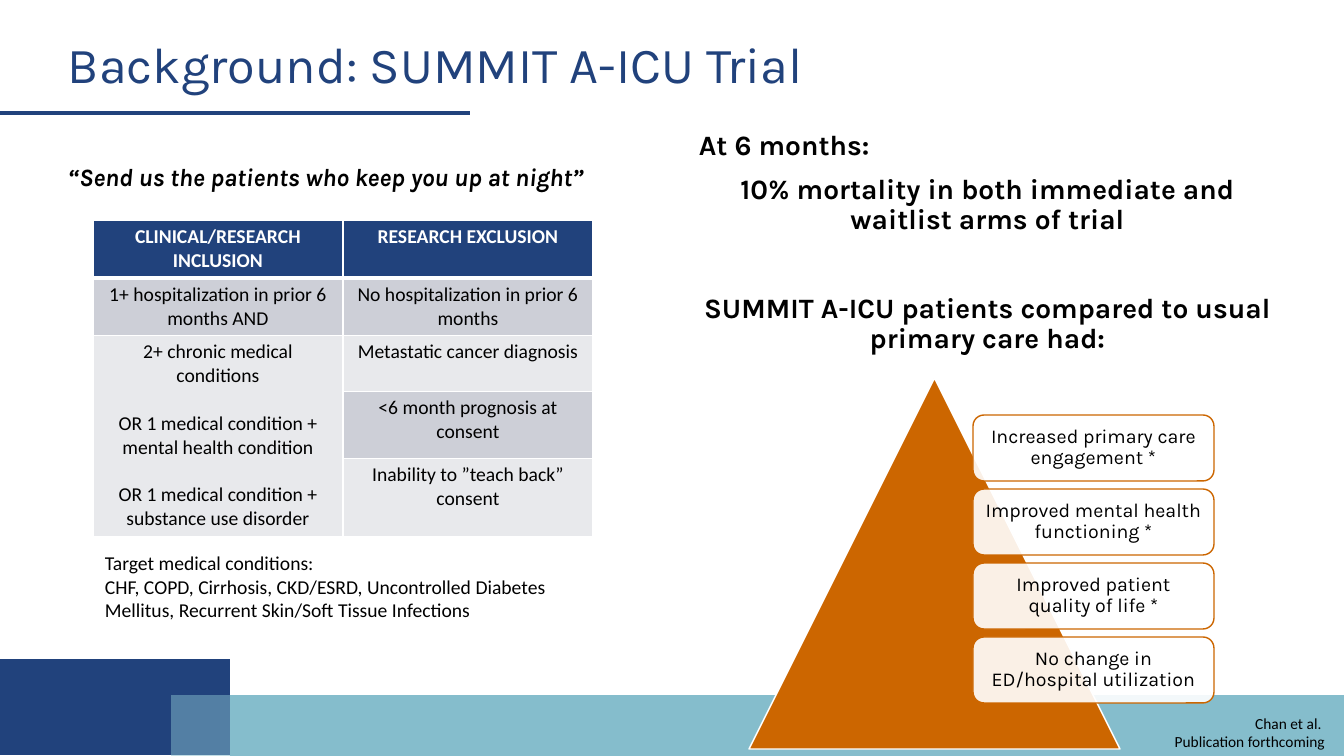
from pptx import Presentation
from pptx import util as u
from pptx.dml.color import RGBColor
from pptx.enum import shapes, text
from pptx.oxml import ns
from lxml import etree

SCALE = 914400 / 100.8
NAVY, TEAL, RUST = "21427C", "85BDCC", "CC6600"
WHITE, BLACK, GRAY, PALE = "FFFFFF", "000000", "CDCFD7", "E8E9EC"
LEFT, MID, RIGHT = text.PP_ALIGN.LEFT, text.PP_ALIGN.CENTER, text.PP_ALIGN.RIGHT
KIND = shapes.MSO_SHAPE
GOALS = [
    "Increased primary care engagement *",
    "Improved mental health functioning *",
    "Improved patient quality of life *",
    "No change in ED/hospital utilization",
]
NEEDS = [
    "2+ chronic medical conditions",
    "OR 1 medical condition + mental health condition",
    "OR 1 medical condition + substance use disorder",
]
ROWS = [
    (58, NAVY, ["CLINICAL/RESEARCH INCLUSION"], "RESEARCH EXCLUSION"),
    (57, GRAY, ["1+ hospitalization in prior 6 months AND"],
     "No hospitalization in prior 6 months"),
    (56, PALE, NEEDS, "Metastatic cancer diagnosis"),
    (67, GRAY, [], "<6 month prognosis at consent"),
    (78, PALE, [], "Inability to ”teach back” consent"),
]


def px(num):
    return u.Emu(round(num * SCALE))


def hue(code):
    return RGBColor.from_string(code)


def apply(item, form):
    for key, value in form.items():
        setattr(item, key, value)


def paint(fill, code):
    fill.solid()
    fill.fore_color.rgb = hue(code)


def font(size, name="Karla", **more):
    return {"size": u.Pt(size), "name": name, **more}


def write(frame, lines, face, code=BLACK, gap=0, **form):
    for i, line in enumerate(lines):
        para = frame.paragraphs[0] if i == 0 else frame.add_paragraph()
        para.text = line
        apply(para, {"space_before": u.Pt(gap if i else 0), **form})
        apply(para.font, face)
        para.font.color.rgb = hue(code)


def label(slide, box, lines, face, code=BLACK, gap=0, low=False, **form):
    frame = slide.shapes.add_textbox(*map(px, box)).text_frame
    anchor = text.MSO_ANCHOR.BOTTOM if low else text.MSO_ANCHOR.TOP
    apply(frame, {"word_wrap": True, "vertical_anchor": anchor})
    write(frame, lines, face, code, gap, **form)
    return frame


def block(slide, kind, box, code, edge=None, alpha=100):
    shape = slide.shapes.add_shape(kind, *map(px, box))
    shape.shadow.inherit = False
    paint(shape.fill, code)
    if alpha < 100:
        color = shape._element.spPr.find(".//" + ns.qn("a:srgbClr"))
        etree.SubElement(color, ns.qn("a:alpha"), val=str(alpha * 1000))
    if edge:
        paint(shape.line.fill, edge)
        shape.line.width = u.Pt(1)
    else:
        shape.line.fill.background()
    return shape


def rule(slide, ends):
    line = slide.shapes.add_connector(shapes.MSO_CONNECTOR.STRAIGHT, *map(px, ends))
    paint(line.line.fill, NAVY)
    line.line.width = u.Pt(2.25)
    etree.SubElement(line._element.spPr, ns.qn("a:effectLst"))


def border(cell, widths):
    props = cell._tc.get_or_add_tcPr()
    for i, (side, width) in enumerate(widths.items()):
        edge = etree.Element(ns.qn("a:ln" + side), w=str(u.Pt(width)))
        fill = etree.SubElement(edge, ns.qn("a:solidFill"))
        etree.SubElement(fill, ns.qn("a:srgbClr"), val=WHITE)
        props.insert(i, edge)


def table(slide):
    total = sum(row[0] for row in ROWS)
    grid = slide.shapes.add_table(len(ROWS), 2, *map(px, (93, 220, 500, total))).table
    for i, (height, code, left, right) in enumerate(ROWS):
        grid.rows[i].height = px(height)
        head = i == 0
        for j, lines in enumerate((left, [right])):
            cell = grid.cell(i, j)
            paint(cell.fill, PALE if j == 0 and i > 1 else code)
            border(cell, {"L": 1, "R": 1, "T": 3 if i == 1 else 1, "B": 3 if head else 1})
            write(cell.text_frame, lines, font(14, "Calibri", bold=head),
                  WHITE if head else BLACK, gap=17, alignment=MID)
    grid.cell(2, 0).merge(grid.cell(4, 0))


def goals(slide):
    block(slide, KIND.ISOSCELES_TRIANGLE, (749, 378, 371, 371), RUST, WHITE)
    for i, goal in enumerate(GOALS):
        card = block(slide, KIND.ROUNDED_RECTANGLE, (973, 415 + 74 * i, 241, 66),
                     WHITE, RUST, 90)
        frame = card.text_frame
        apply(frame, {"word_wrap": True, "vertical_anchor": text.MSO_ANCHOR.MIDDLE})
        apply(frame, {"margin_" + side: px(9) for side in ("left", "right", "top", "bottom")})
        write(frame, [goal], font(14), alignment=MID, line_spacing=0.9)


def results(slide):
    lines = [
        "At 6 months:",
        "10%\u00a0mortality in both immediate and waitlist arms of trial",
        "SUMMIT A-ICU patients\u00a0compared to usual primary care had:",
    ]
    frame = label(slide, (689, 126, 597, 240), lines, font(20, bold=True),
                  gap=10, alignment=MID, line_spacing=0.9)
    frame.paragraphs[0].alignment = LEFT
    frame.paragraphs[2].space_before = u.Pt(42)


def main():
    deck = Presentation()
    apply(deck, {"slide_width": px(1344), "slide_height": px(756)})
    slide = deck.slides.add_slide(deck.slide_layouts[6])
    block(slide, KIND.RECTANGLE, (0, 659, 230, 96), NAVY)
    block(slide, KIND.RECTANGLE, (230, 695, 1114, 61), TEAL)
    block(slide, KIND.RECTANGLE, (171, 695, 59, 61), TEAL, alpha=50)
    rule(slide, (0, 113, 470, 113))
    label(slide, (58, 18, 1227, 81), ["Background: SUMMIT A-ICU Trial"],
          font(36), NAVY, low=True, line_spacing=0.9)
    label(slide, (58, 157, 597, 40),
          ["“Send us the patients\u00a0who\u00a0keep you up at night”"],
          font(17.8, bold=True, italic=True))
    results(slide)
    table(slide)
    goals(slide)
    label(slide, (95, 546, 496, 82), [
        "Target medical conditions:",
        "CHF, COPD, Cirrhosis, CKD/ESRD, Uncontrolled Diabetes Mellitus, "
        "Recurrent Skin/Soft Tissue Infections",
    ], font(14, "Calibri"))
    label(slide, (995, 709, 340, 47), ["Chan et al. ", "Publication forthcoming"],
          font(11, "Calibri"), alignment=RIGHT)
    deck.save("out.pptx")


if __name__ == "__main__":
    main()
